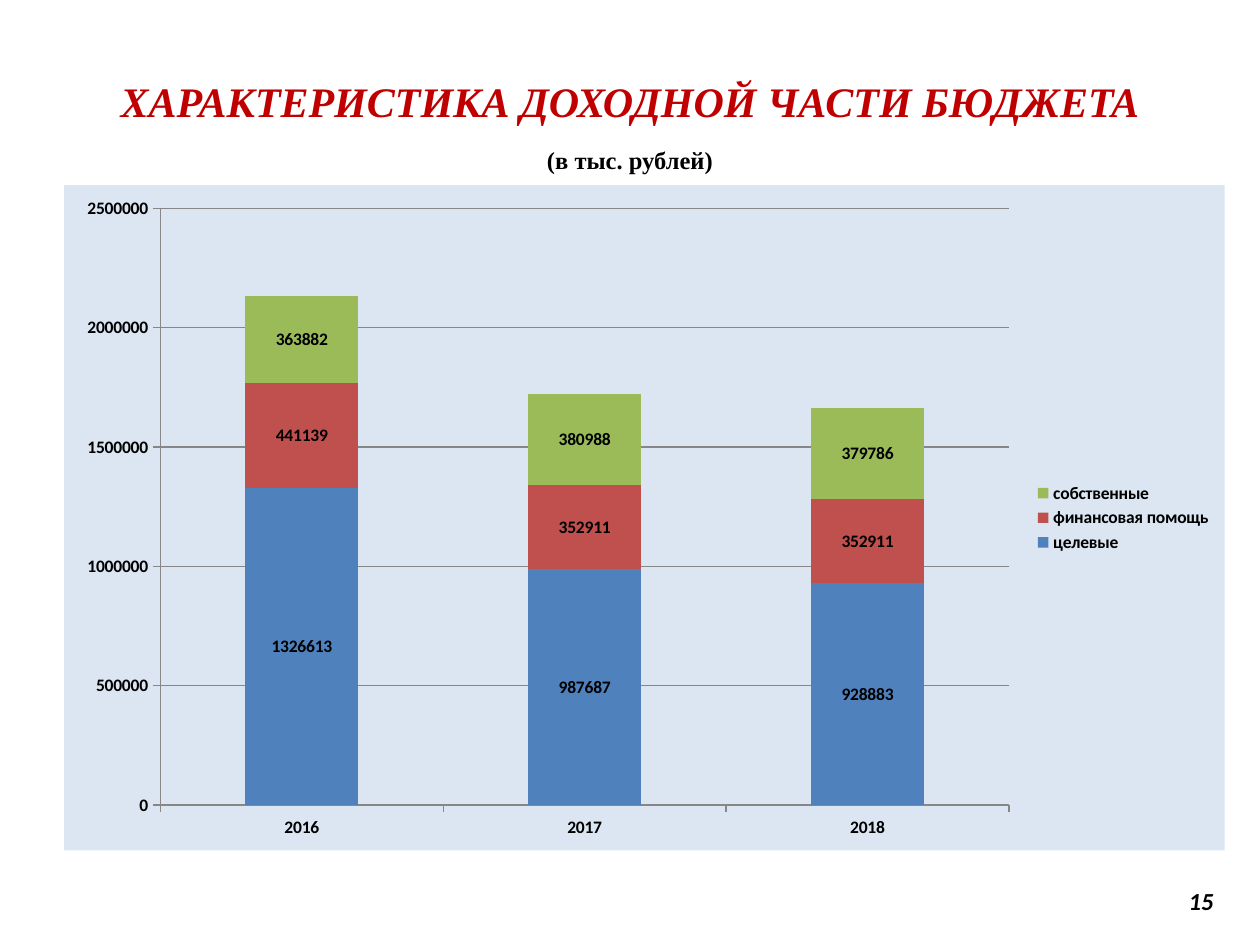
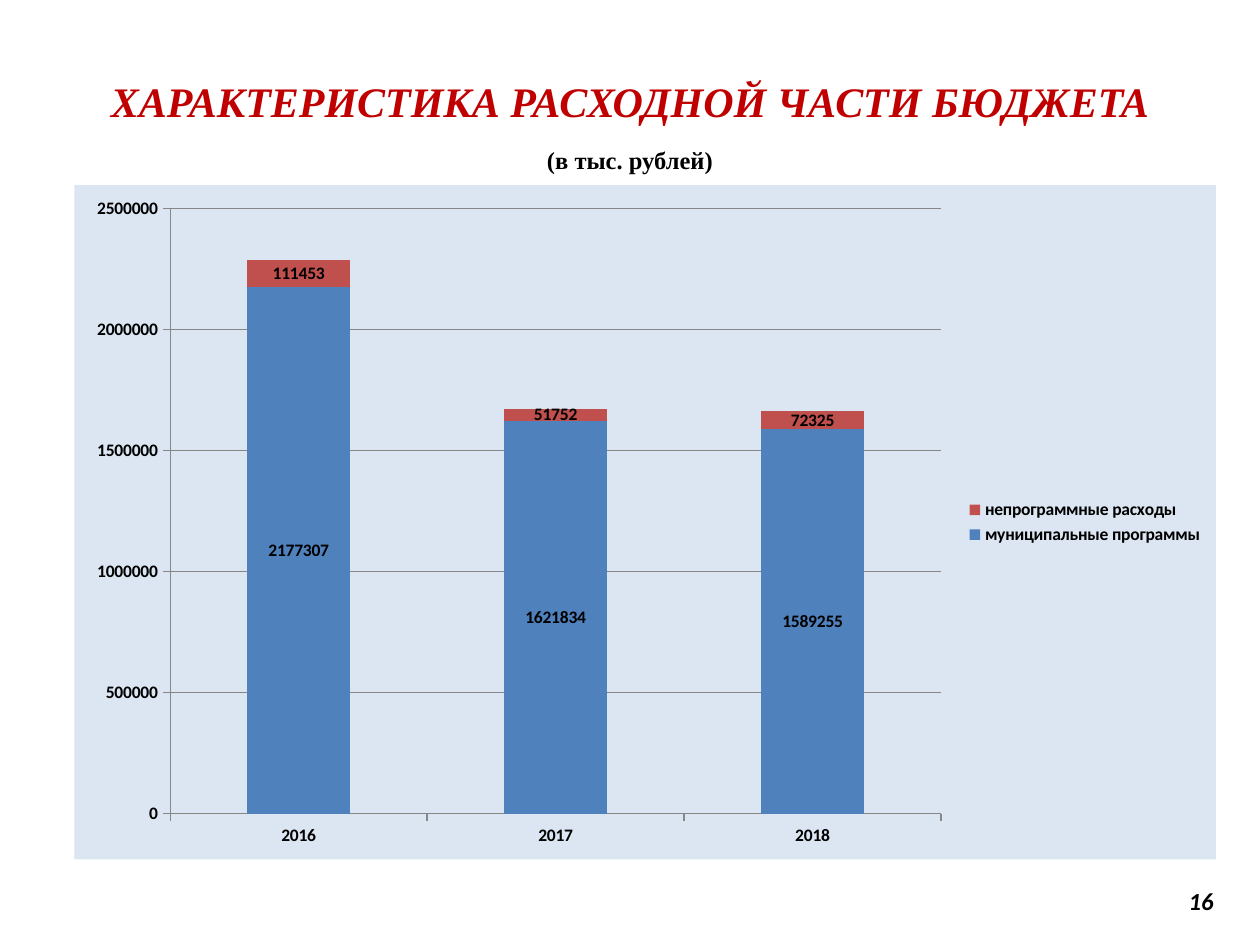
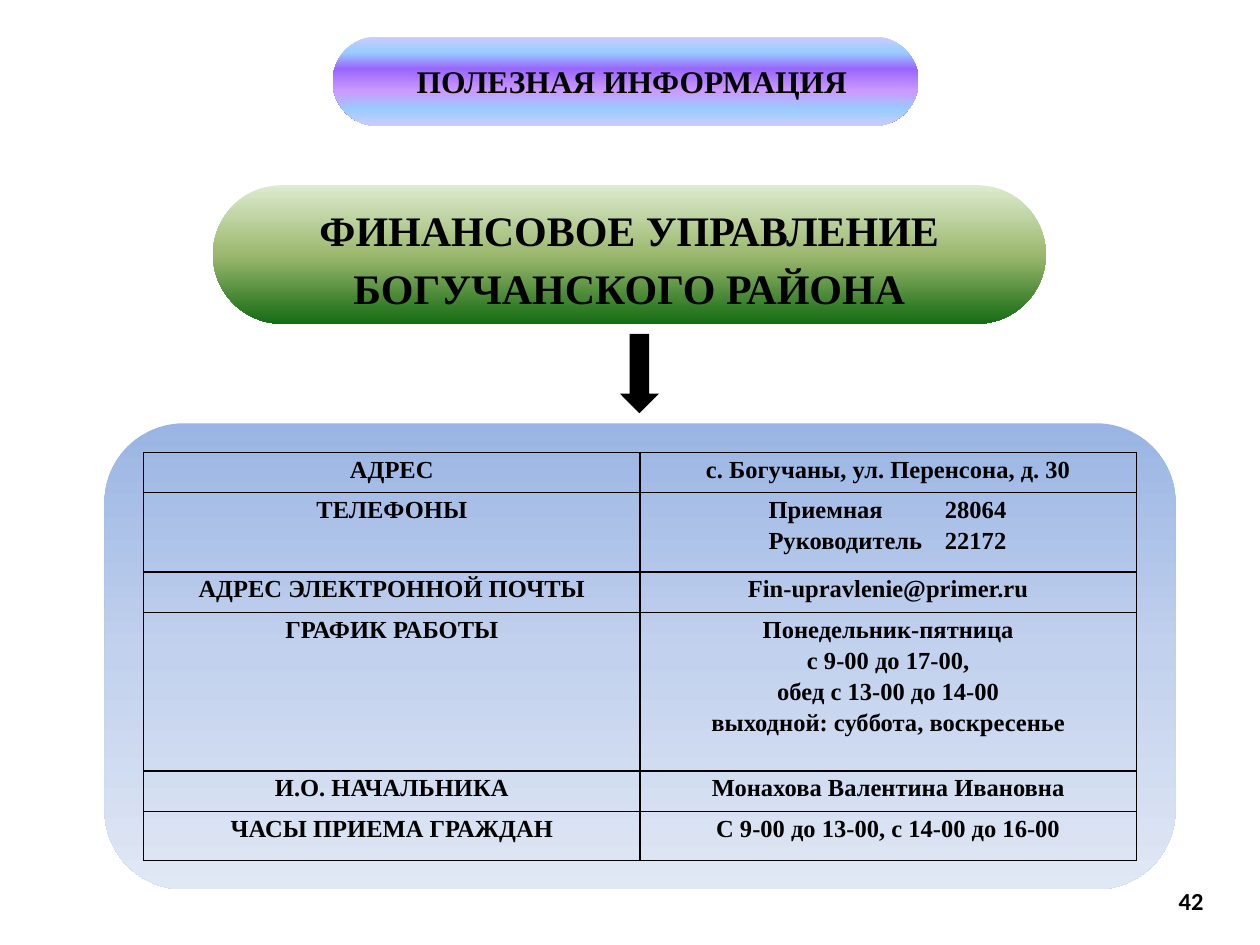
from lxml import etree
from pptx import Presentation
from pptx import util as u
from pptx.chart.data import CategoryChartData
from pptx.dml.color import RGBColor
from pptx.enum import chart as ce, shapes, text
from pptx.oxml import ns

HUES = {
    "ink": "000000", "title": "C00000", "panel": "DCE6F2", "axis": "878787",
    "blue": "4F81BD", "red": "C0504D", "green": "9BBB59",
}
SERIF, SANS = "Times New Roman", "Calibri"
YEARS = ["2016", "2017", "2018"]
RAINBOW = [(0, "CCCCFF"), (18, "99CCFF"), (36, "9966FF"),
           (61, "CC99FF"), (82, "99CCFF"), (100, "CCCCFF")]
GRASS = [(0, "DDEBCF"), (50, "9CB86E"), (100, "156B13")]
SKY = [(0, "9AB5E4"), (50, "C2D1ED"), (100, "E1E8F5")]
INCOME = [
    ("целевые", "blue", [1326613, 987687, 928883]),
    ("финансовая помощь", "red", [441139, 352911, 352911]),
    ("собственные", "green", [363882, 380988, 379786]),
]
COSTS = [
    ("муниципальные программы", "blue", [2177307, 1621834, 1589255]),
    ("непрограммные расходы", "red", [111453, 51752, 72325]),
]
FACTS = [
    (0.32, "АДРЕС", ["с. Богучаны, ул. Перенсона, д. 30"]),
    (0.63, "ТЕЛЕФОНЫ", ["Приемная\t28064", "Руководитель\t22172"]),
    (0.32, "АДРЕС ЭЛЕКТРОННОЙ ПОЧТЫ", ["Fin-upravlenie@primer.ru"]),
    (1.26, "ГРАФИК РАБОТЫ", ["Понедельник-пятница", "с 9-00 до 17-00,",
                             "обед с 13-00 до 14-00",
                             "выходной: суббота, воскресенье"]),
    (0.32, "И.О. НАЧАЛЬНИКА", ["Монахова Валентина Ивановна"]),
    (0.39, "ЧАСЫ ПРИЕМА ГРАЖДАН", ["С 9-00 до 13-00, с 14-00 до 16-00"]),
]


def inches(box):
    return [u.Inches(n) for n in box]


def rgb(name):
    return RGBColor.from_string(HUES[name])


def node(parent, tag, **attrs):
    return etree.SubElement(parent, ns.qn(tag), attrs)


def paint(parent, hue):
    node(node(parent, "a:solidFill"), "a:srgbClr", val=hue)


def write(frame, line, new=False, size=14, face=SERIF, hue="ink", slant=False,
          align="CENTER", lead=None, before=None, tab=None):
    para = frame.add_paragraph() if new else frame.paragraphs[0]
    if tab:
        stops = node(para._p.get_or_add_pPr(), "a:tabLst")
        node(stops, "a:tab", pos=str(u.Inches(tab)), algn="l")
    para.alignment = getattr(text.PP_ALIGN, align)
    para.line_spacing = lead
    para.space_before = before
    run = para.add_run()
    run.text = line
    font = run.font
    font.name, font.size, font.bold, font.italic = face, u.Pt(size), True, slant
    font.color.rgb = rgb(hue)


def frame(slide, box, anchor="MIDDLE", wrap=True):
    area = slide.shapes.add_textbox(*inches(box)).text_frame
    area.word_wrap = wrap
    area.vertical_anchor = getattr(text.MSO_ANCHOR, anchor)
    return area


def number(slide, page, right, slant):
    write(frame(slide, (7.17, 6.95, right - 7.17, 0.4)), page, face=SANS,
          slant=slant, align="RIGHT")


def heading(slide, line):
    area = frame(slide, (0, 0.08, 10, 1.35), "BOTTOM")
    write(area, line, size=24, hue="title", slant=True)
    write(area, "(в тыс. рублей)", new=True, before=u.Pt(10.5))


def graph(slide, box, rows):
    data = CategoryChartData(number_format="0")
    data.categories = YEARS
    for name, _, vals in rows:
        data.add_series(name, vals)
    chart = slide.shapes.add_chart(
        ce.XL_CHART_TYPE.COLUMN_STACKED, *inches(box), data).chart
    font = chart.font
    font.name, font.size, font.bold = SANS, u.Pt(10), True
    font.color.rgb = rgb("ink")
    chart.has_title = False
    chart.has_legend = True
    chart.legend.position = ce.XL_LEGEND_POSITION.RIGHT
    chart.legend.include_in_layout = False

    plot = chart.plots[0]
    plot.gap_width, plot.overlap = 150, 100
    plot.vary_by_categories = False
    plot.has_data_labels = True
    plot.data_labels.show_value = True
    for row, (_, hue, _) in zip(plot.series, rows):
        row.format.fill.solid()
        row.format.fill.fore_color.rgb = rgb(hue)

    scale = chart.value_axis
    scale.minimum_scale, scale.maximum_scale = 0, 2500000
    scale.major_unit = 500000
    scale.has_major_gridlines = True
    for axis in (chart.category_axis, scale):
        axis.major_tick_mark = ce.XL_TICK_MARK.OUTSIDE
    for part in (chart.category_axis, scale, scale.major_gridlines):
        part.format.line.color.rgb = rgb("axis")
        part.format.line.width = u.Pt(0.75)

    look = etree.Element(ns.qn("c:spPr"))
    paint(look, HUES["panel"])
    node(node(look, "a:ln"), "a:noFill")
    chart._chartSpace.find(ns.qn("c:chart")).addnext(look)


def budget(slide, title, page, box, rows):
    heading(slide, title)
    number(slide, page, 9.73, True)
    graph(slide, box, rows)


def shape(slide, kind, box):
    item = slide.shapes.add_shape(kind, *inches(box))
    item.shadow.inherit = False
    item.line.fill.background()
    return item


def pill(slide, box, stops, curve=0.5):
    item = shape(slide, shapes.MSO_SHAPE.ROUNDED_RECTANGLE, box)
    item.adjustments[0] = curve
    item.fill.gradient()
    item.fill.gradient_angle = 270
    ramp = item._element.spPr.find(".//" + ns.qn("a:gsLst"))
    for old in list(ramp):
        ramp.remove(old)
    for pos, hue in stops:
        node(node(ramp, "a:gs", pos=str(pos * 1000)), "a:srgbClr", val=hue)
    return item


def fill_cell(cell, lines):
    tabbed = "\t" in lines[0]
    cell.margin_left = u.Inches(1.02 if tabbed else 0.07)
    cell.margin_right = u.Inches(0.07)
    cell.margin_top = cell.margin_bottom = 0
    for i, line in enumerate(lines):
        write(cell.text_frame, line, new=i > 0, lead=1.15,
              align="LEFT" if tabbed else "CENTER", tab=1.4 if tabbed else None)
    props = cell._tc.get_or_add_tcPr()
    for side in ("L", "R", "T", "B"):
        paint(node(props, "a:ln" + side, w=str(u.Pt(1))), HUES["ink"])
    cell.fill.background()


def facts(slide, box):
    left, top, width, height = box
    pill(slide, box, SKY, 0.17)
    high = sum(row[0] for row in FACTS)
    spot = (left + 0.31, top + 0.23, width - 0.62, high)
    table = slide.shapes.add_table(len(FACTS), 2, *inches(spot)).table
    table.first_row = table.horz_banding = False
    for i, (tall, label, lines) in enumerate(FACTS):
        table.rows[i].height = u.Inches(tall)
        fill_cell(table.cell(i, 0), [label])
        fill_cell(table.cell(i, 1), lines)


def contact(slide):
    number(slide, "42", 9.65, False)
    pill(slide, (2.64, 0.29, 4.65, 0.71), RAINBOW)
    write(frame(slide, (3.19, 0.44, 3.65, 0.4), "TOP", False),
          "ПОЛЕЗНАЯ ИНФОРМАЦИЯ", size=18)
    office = pill(slide, (1.69, 1.47, 6.61, 1.1), GRASS).text_frame
    office.word_wrap = True
    office.vertical_anchor = text.MSO_ANCHOR.MIDDLE
    write(office, "ФИНАНСОВОЕ УПРАВЛЕНИЕ БОГУЧАНСКОГО РАЙОНА", size=24, lead=1.15)
    arrow = shape(slide, shapes.MSO_SHAPE.DOWN_ARROW, (4.92, 2.65, 0.31, 0.63))
    arrow.fill.solid()
    arrow.fill.fore_color.rgb = rgb("ink")
    facts(slide, (0.83, 3.36, 8.5, 3.7))


def main():
    deck = Presentation()
    deck.slide_width, deck.slide_height = u.Inches(10), u.Inches(7.5)
    first, second, third = [
        deck.slides.add_slide(deck.slide_layouts[6]) for _ in range(3)]
    budget(first, "ХАРАКТЕРИСТИКА ДОХОДНОЙ ЧАСТИ БЮДЖЕТА", "15",
           (0.51, 1.47, 9.21, 5.28), INCOME)
    budget(second, "ХАРАКТЕРИСТИКА РАСХОДНОЙ ЧАСТИ БЮДЖЕТА", "16",
           (0.59, 1.47, 9.06, 5.35), COSTS)
    contact(third)
    deck.save("out.pptx")


if __name__ == "__main__":
    main()
